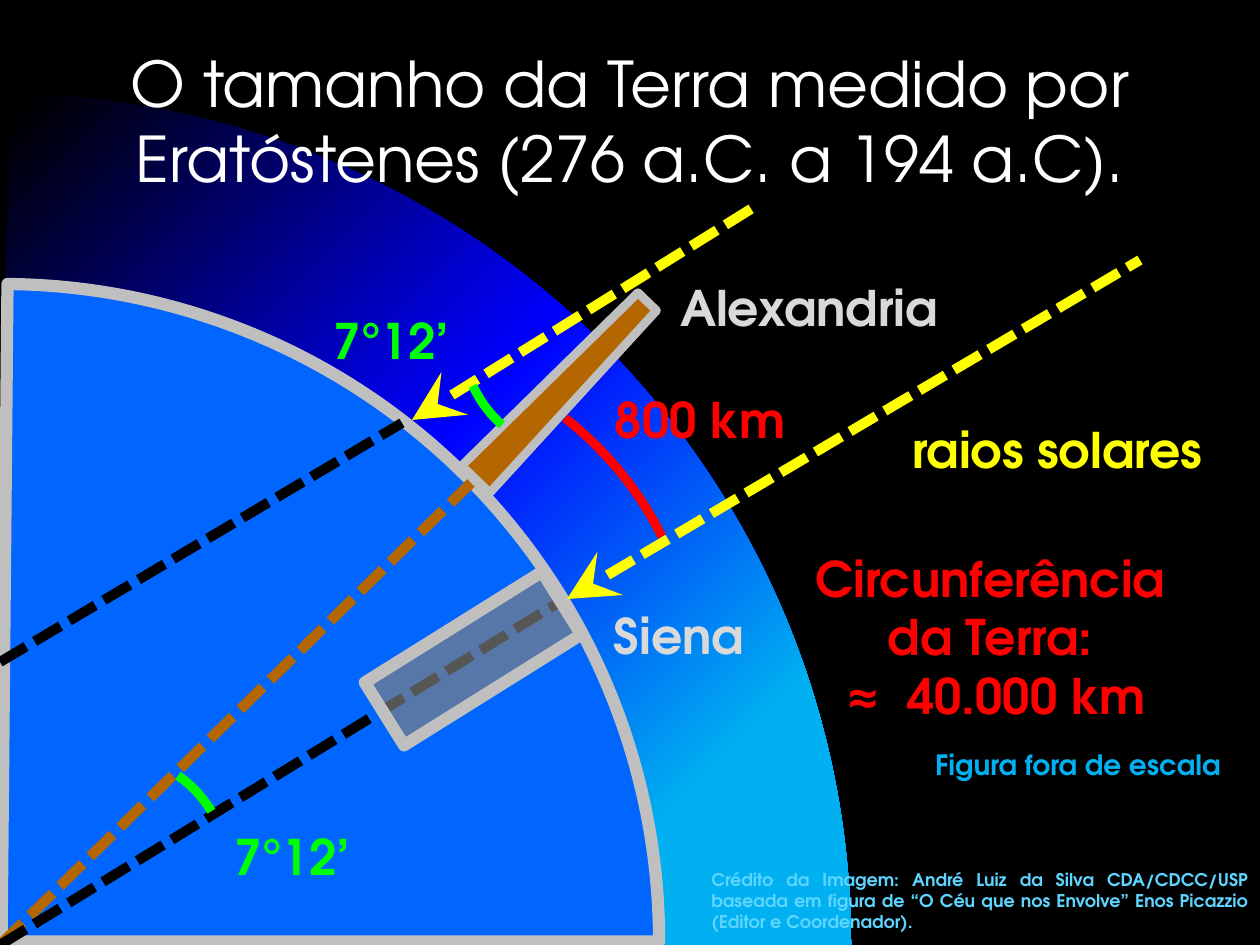
"""Build the slide on how Eratosthenes measured the Earth."""
from dataclasses import dataclass
from typing import Any, NamedTuple, Optional

from lxml.etree import SubElement
from pptx import Presentation
from pptx.dml.color import RGBColor
from pptx.enum.dml import MSO_LINE
from pptx.enum.shapes import MSO_CONNECTOR, MSO_SHAPE as Preset
from pptx.enum.text import MSO_ANCHOR, MSO_AUTO_SIZE as AutoSize, PP_ALIGN as Align
from pptx.oxml import parse_xml
from pptx.oxml.ns import nsdecls, qn
from pptx.util import Emu, Pt

PX = 914400 / 126
SANS = "TeX Gyre Adventor"
MONO = "DejaVu Sans Mono"

BLACK = RGBColor(0x00, 0x00, 0x00)
WHITE = RGBColor(0xFF, 0xFF, 0xFF)
SKY = RGBColor(0x00, 0xB0, 0xF0)
DEEP_BLUE = RGBColor(0x00, 0x00, 0xFF)
EARTH_BLUE = RGBColor(0x00, 0x66, 0xFF)
PALE_BLUE = RGBColor(0x5D, 0xD5, 0xFF)
EDGE = RGBColor(0xBF, 0xBF, 0xBF)
CITY_GREY = RGBColor(0xD9, 0xD9, 0xD9)
WELL_GREY = RGBColor(0x80, 0x80, 0x80)
BROWN = RGBColor(0xB4, 0x67, 0x00)
YELLOW = RGBColor(0xFF, 0xFF, 0x00)
GREEN = RGBColor(0x00, 0xFF, 0x00)
RED = RGBColor(0xFF, 0x00, 0x00)


class Box(NamedTuple):
    left: int
    top: int
    width: int
    height: int


class Run(NamedTuple):
    text: str
    font: str = SANS


@dataclass(frozen=True)
class Figure:
    preset: Preset
    box: Box
    rotation: float
    adjustments: tuple[float, ...]
    fill: Optional[RGBColor] = None
    line: Optional[RGBColor] = None
    weight: float = 0
    flipped: bool = False
    opacity: int = 100


@dataclass(frozen=True)
class Dashes:
    start: tuple[int, int]
    end: tuple[int, int]
    color: RGBColor
    weight: float = 5.75
    arrow: bool = False


@dataclass(frozen=True)
class Label:
    box: Box
    paragraphs: tuple[tuple[Run, ...], ...]
    color: RGBColor
    size: int = 28
    align: Align = Align.CENTER
    wrap: bool = True


def px(*lengths: int) -> list[Emu]:
    return [Emu(round(length * PX)) for length in lengths]


def apply(target: Any, values: dict[str, Any]) -> None:
    for name, value in values.items():
        setattr(target, name, value)


def draw_figure(slide: Any, figure: Figure) -> Any:
    shape = slide.shapes.add_shape(figure.preset, *px(*figure.box))
    shape.shadow.inherit = False
    shape.rotation = figure.rotation
    for index, value in enumerate(figure.adjustments):
        shape.adjustments[index] = value
    if figure.flipped:
        shape.element.spPr.find(qn("a:xfrm")).set("flipH", "1")
    if figure.fill is None:
        shape.fill.background()
    else:
        shape.fill.solid()
        shape.fill.fore_color.rgb = figure.fill
        if figure.opacity < 100:
            color = shape.element.spPr.find(qn("a:solidFill"))[0]
            SubElement(color, qn("a:alpha")).set("val", str(figure.opacity * 1000))
    if figure.line is None:
        shape.line.fill.background()
    else:
        shape.line.color.rgb = figure.line
        shape.line.width = Pt(figure.weight)
    return shape


def glow(shape: Any, stops: dict[int, RGBColor]) -> None:
    marks = "".join(
        f'<a:gs pos="{position * 1000}"><a:srgbClr val="{color}"/></a:gs>'
        for position, color in stops.items()
    )
    gradient = parse_xml(
        f'<a:gradFill {nsdecls("a")} rotWithShape="0"><a:gsLst>{marks}</a:gsLst>'
        '<a:path path="circle"><a:fillToRect l="100000" t="100000"/></a:path></a:gradFill>'
    )
    properties = shape.element.spPr
    properties.replace(properties.find(qn("a:noFill")), gradient)


def draw_dashes(slide: Any, dashes: Dashes) -> None:
    connector = slide.shapes.add_connector(
        MSO_CONNECTOR.STRAIGHT, *px(*dashes.start, *dashes.end)
    )
    connector.line.color.rgb = dashes.color
    apply(connector.line, {"width": Pt(dashes.weight), "dash_style": MSO_LINE.SQUARE_DOT})
    properties = connector.element.spPr
    if dashes.arrow:
        head = SubElement(properties.find(qn("a:ln")), qn("a:headEnd"))
        for name, value in {"type": "stealth", "w": "lg", "len": "lg"}.items():
            head.set(name, value)
    SubElement(properties, qn("a:effectLst"))


def draw_label(slide: Any, label: Label) -> None:
    frame = slide.shapes.add_textbox(*px(*label.box)).text_frame
    apply(frame, {"word_wrap": label.wrap, "auto_size": AutoSize.SHAPE_TO_FIT_TEXT})
    for index, runs in enumerate(label.paragraphs):
        paragraph = frame.add_paragraph() if index else frame.paragraphs[0]
        paragraph.alignment = label.align
        for text, font in runs:
            run = paragraph.add_run()
            run.text = text
            apply(run.font, {"name": font, "size": Pt(label.size), "bold": True})
            run.font.color.rgb = label.color


def place_title(title: Any, text: str) -> None:
    left, top, width, height = px(0, 38, 1260, 158)
    apply(title, {"left": left, "top": top, "width": width, "height": height})
    frame = title.text_frame
    frame.text = text
    apply(frame, {"word_wrap": True, "auto_size": AutoSize.NONE,
                  "vertical_anchor": MSO_ANCHOR.TOP})
    paragraph = frame.paragraphs[0]
    paragraph.alignment = Align.CENTER
    apply(paragraph.runs[0].font, {"name": SANS, "size": Pt(36), "bold": False})
    paragraph.runs[0].font.color.rgb = WHITE


QUADRANT = (108.31, 162)
ANGLE_ARC = (193.13, 207.27)
ATMOSPHERE = Figure(Preset.PIE, Box(-850, 94, 1701, 1701), 90, QUADRANT)
EARTH = Figure(Preset.PIE, Box(-656, 284, 1315, 1315), 90, QUADRANT, EARTH_BLUE, EDGE, 7)
BEAMS = (
    Dashes((0, 945), (471, 483), BROWN, 6),
    Dashes((0, 945), (561, 601), BLACK),
    Dashes((0, 662), (402, 423), BLACK),
    Dashes((412, 420), (759, 204), YELLOW, arrow=True),
)
SIENA_RAY = Dashes((567, 599), (1140, 260), YELLOW, arrow=True)
FIGURES = (
    Figure(Preset.TRAPEZOID, Box(542, 267, 39, 247), 44, (0.17,), BROWN, EDGE, 5),
    Figure(Preset.ARC, Box(461, 217, 239, 236), 296.6, ANGLE_ARC, None, GREEN, 5.25, True),
    Figure(Preset.ARC, Box(-9, 756, 239, 236), 110, ANGLE_ARC, None, GREEN, 5.25, True),
    Figure(Preset.TRAPEZOID, Box(436, 554, 74, 209), 238, (0,), WELL_GREY, EDGE, 7, opacity=68),
    Figure(Preset.ARC, Box(21, 307, 644, 706), 103.6, (182.86, 198.64), None, RED, 5.25, True),
)
ANGLE = ((Run("7°12’"),),)
PLACE_LABELS = (
    Label(Box(213, 820, 159, 72), ANGLE, GREEN),
    Label(Box(312, 304, 159, 72), ANGLE, GREEN),
    Label(Box(591, 383, 218, 72), ((Run("800 km"),),), RED),
    Label(Box(650, 271, 318, 72), ((Run("Alexandria"),),), CITY_GREY),
    Label(Box(520, 599, 318, 72), ((Run("Siena"),),), CITY_GREY),
)
NOTE_LABELS = (
    Label(Box(759, 542, 476, 190), (
        (Run("Circunferência "),),
        (Run("da Terra: "),),
        (Run("≈ ", MONO), Run("40.000 km")),
    ), RED),
    Label(Box(919, 741, 318, 47), ((Run("Figura fora de escala"),),), SKY, 16, wrap=False),
    Label(Box(888, 413, 338, 72), ((Run("raios solares"),),), YELLOW),
    Label(Box(699, 863, 561, 77), ((Run(
        "Crédito da Imagem: André Luiz da Silva CDA/CDCC/USP baseada em figura de "
        "“O Céu que nos Envolve” Enos Picazzio (Editor e Coordenador). "),),),
        PALE_BLUE, 10, Align.JUSTIFY),
)


def main() -> None:
    deck = Presentation()
    deck.slide_width, deck.slide_height = px(1260, 945)
    slide = deck.slides.add_slide(deck.slide_layouts[5])
    slide.background.fill.solid()
    slide.background.fill.fore_color.rgb = BLACK
    atmosphere = draw_figure(slide, ATMOSPHERE)
    glow(atmosphere, {34: SKY, 52: DEEP_BLUE, 74: BLACK})
    title = slide.shapes.title
    place_title(title, "O tamanho da Terra medido por Eratóstenes (276 a.C. a 194 a.C).")
    atmosphere.element.addnext(title.element)
    draw_figure(slide, EARTH)
    for beam in BEAMS:
        draw_dashes(slide, beam)
    for figure in FIGURES:
        draw_figure(slide, figure)
    for label in PLACE_LABELS:
        draw_label(slide, label)
    draw_dashes(slide, SIENA_RAY)
    for label in NOTE_LABELS:
        draw_label(slide, label)
    deck.save("out.pptx")


if __name__ == "__main__":
    main()
